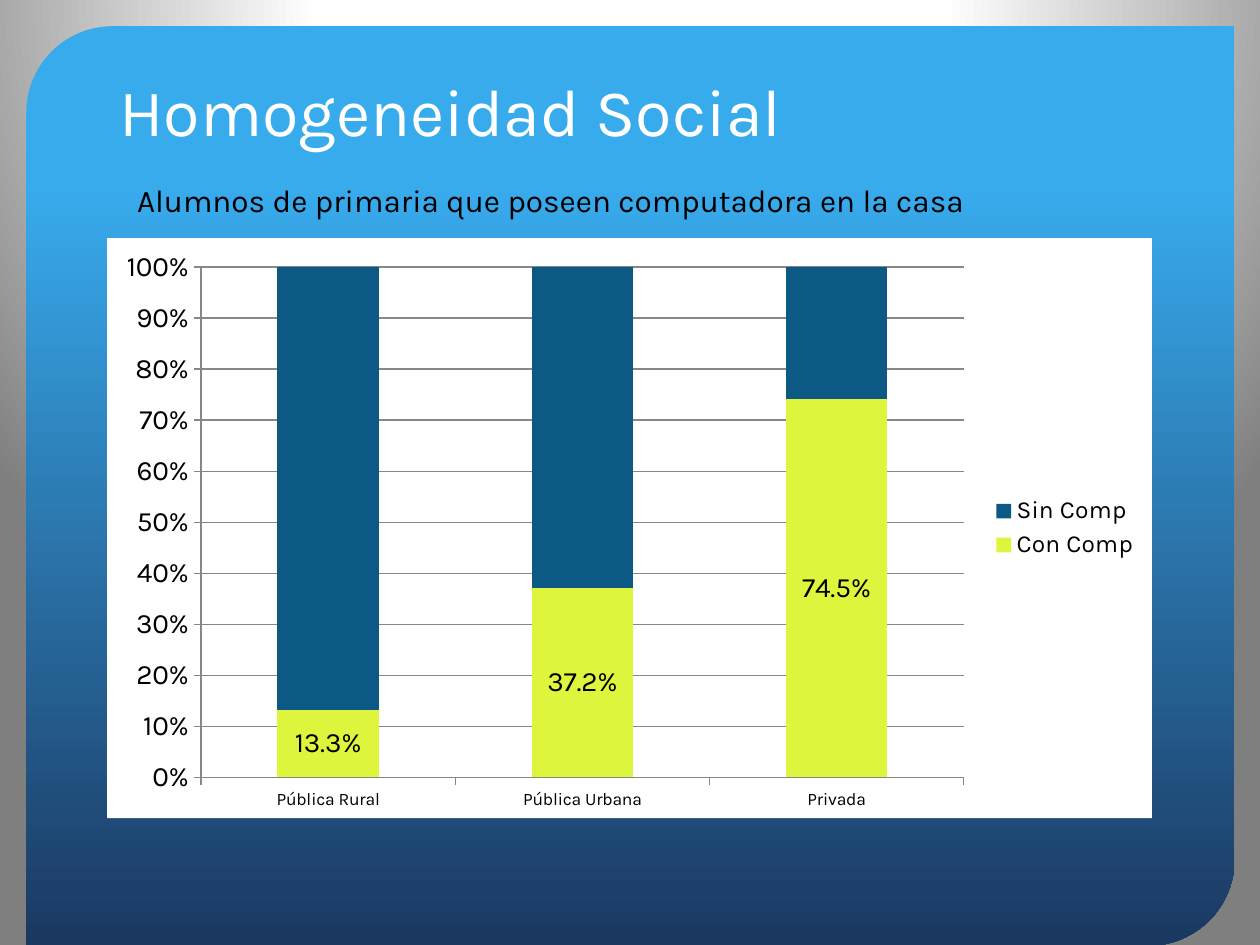
import copy
import dataclasses
import typing

import lxml.etree
import pptx
import pptx.chart.axis
import pptx.chart.data
import pptx.dml.color
import pptx.dml.fill
import pptx.enum.chart
import pptx.enum.shapes
import pptx.enum.text
import pptx.oxml
import pptx.oxml.ns
import pptx.slide
import pptx.util

Pt = pptx.util.Pt
qn = pptx.oxml.ns.qn


@dataclasses.dataclass(frozen=True)
class Theme:
    font: str = "Karla"
    white: str = "FFFFFF"
    black: str = "000000"
    grid: str = "878787"
    with_computer: str = "DDF53D"
    without_computer: str = "0C5986"
    title_size: float = 38
    subtitle_size: float = 18
    value_size: float = 16
    legend_size: float = 14
    category_size: float = 10


class Box(typing.NamedTuple):
    left: float
    top: float
    width: float
    height: float

    def lengths(self) -> list[pptx.util.Length]:
        return [Pt(length) for length in self]


class Stop(typing.NamedTuple):
    position: float
    color: str


@dataclasses.dataclass(frozen=True)
class Line:
    text: str
    box: Box
    size: float
    color: str
    anchor: pptx.enum.text.MSO_ANCHOR


@dataclasses.dataclass(frozen=True)
class Group:
    name: str
    shares: tuple[float, ...]
    color: str
    labelled: bool


THEME = Theme()
BACKDROP = (Stop(0, "FFFFFF"), Stop(0.4, "FEFEFE"), Stop(1, "7F7F7F"))
PANEL = (Stop(0.17, "38ABED"), Stop(1, "1B3861"))
PANEL_BOX = Box(15, 15, 690.5, 525.5)
CHART_BOX = Box(61.2, 136, 597, 331.5)
PLOT_AREA = {"x": 0.09, "y": 0.05, "w": 0.73, "h": 0.88}
SCHOOLS = ("Pública Rural", "Pública Urbana", "Privada")
GROUPS = (
    Group("Con Comp", (0.133, 0.372, 0.745), THEME.with_computer, True),
    Group("Sin Comp", (0.87, 0.63, 0.26), THEME.without_computer, False),
)
LINES = (
    Line("Homogeneidad Social", Box(61.2, 30.2, 597, 59), THEME.title_size,
         THEME.white, pptx.enum.text.MSO_ANCHOR.BOTTOM),
    Line("Alumnos de primaria que poseen computadora en la casa",
         Box(71.3, 100.1, 587.5, 28.8), THEME.subtitle_size,
         THEME.black, pptx.enum.text.MSO_ANCHOR.TOP),
)


def rgb(color: str) -> pptx.dml.color.RGBColor:
    return pptx.dml.color.RGBColor.from_string(color)


def style_font(font, size: float, color: str = THEME.black) -> None:
    font.name = THEME.font
    font.size = Pt(size)
    font.bold = False
    font.color.rgb = rgb(color)


def set_stops(fill: pptx.dml.fill.FillFormat, stops: tuple[Stop, ...]) -> None:
    for gradient_stop, stop in zip(fill.gradient_stops, stops):
        gradient_stop.position = stop.position
        gradient_stop.color.rgb = rgb(stop.color)


def paint_backdrop(slide: pptx.slide.Slide) -> None:
    fill = slide.background.fill
    fill.gradient()
    gradient = slide.element.find(".//" + qn("a:gradFill"))
    stop_list = gradient.find(qn("a:gsLst"))
    stop_list.append(copy.deepcopy(stop_list[0]))
    set_stops(fill, BACKDROP)
    gradient.remove(gradient.find(qn("a:lin")))
    circle = lxml.etree.Element(qn("a:path"), path="circle")
    lxml.etree.SubElement(circle, qn("a:fillToRect"),
                          l="50000", t="-80000", r="50000", b="180000")
    stop_list.addnext(circle)


def draw_panel(slide: pptx.slide.Slide) -> None:
    panel = slide.shapes.add_shape(
        pptx.enum.shapes.MSO_SHAPE.ROUND_2_DIAG_RECTANGLE, *PANEL_BOX.lengths())
    panel.adjustments[0] = 0.094
    panel.adjustments[1] = 0
    panel.shadow.inherit = False
    panel.line.fill.background()
    panel.fill.gradient()
    panel.fill.gradient_angle = 270
    set_stops(panel.fill, PANEL)


def draw_line(slide: pptx.slide.Slide, line: Line) -> None:
    frame = slide.shapes.add_textbox(*line.box.lengths()).text_frame
    frame.word_wrap = True
    frame.vertical_anchor = line.anchor
    run = frame.paragraphs[0].add_run()
    run.text = line.text
    style_font(run.font, line.size, line.color)


def style_axis(axis: pptx.chart.axis._BaseAxis, size: float) -> None:
    axis.major_tick_mark = pptx.enum.chart.XL_TICK_MARK.OUTSIDE
    axis.minor_tick_mark = pptx.enum.chart.XL_TICK_MARK.NONE
    axis.format.line.color.rgb = rgb(THEME.grid)
    axis.format.line.width = Pt(0.75)
    style_font(axis.tick_labels.font, size)


def draw_chart(slide: pptx.slide.Slide) -> None:
    chart_data = pptx.chart.data.CategoryChartData(number_format="0.0%")
    chart_data.categories = SCHOOLS
    for group in GROUPS:
        chart_data.add_series(group.name, group.shares)
    chart = slide.shapes.add_chart(
        pptx.enum.chart.XL_CHART_TYPE.COLUMN_STACKED_100,
        *CHART_BOX.lengths(), chart_data).chart
    chart.has_title = False
    style_font(chart.font, THEME.category_size)

    style_axis(chart.category_axis, THEME.category_size)
    shares = chart.value_axis
    style_axis(shares, THEME.value_size)
    shares.minimum_scale, shares.maximum_scale, shares.major_unit = 0, 1, 0.1
    shares.tick_labels.number_format = "0%"
    shares.tick_labels.number_format_is_linked = False
    shares.has_major_gridlines = True
    shares.major_gridlines.format.line.color.rgb = rgb(THEME.grid)
    shares.major_gridlines.format.line.width = Pt(0.75)

    chart.has_legend = True
    chart.legend.position = pptx.enum.chart.XL_LEGEND_POSITION.RIGHT
    chart.legend.include_in_layout = False
    style_font(chart.legend.font, THEME.legend_size)

    columns = chart.plots[0]
    columns.gap_width, columns.overlap = 150, 100
    columns.vary_by_categories = False
    for group, series in zip(GROUPS, columns.series):
        series.format.fill.solid()
        series.format.fill.fore_color.rgb = rgb(group.color)
        if group.labelled:
            labels = series.data_labels
            labels.show_value = True
            labels.number_format = "0.0%"
            labels.number_format_is_linked = False
            style_font(labels.font, THEME.value_size)

    plot_area = chart.element.find(".//" + qn("c:plotArea"))
    for default_layout in plot_area.findall(qn("c:layout")):
        plot_area.remove(default_layout)
    layout = lxml.etree.Element(qn("c:layout"))
    manual = lxml.etree.SubElement(layout, qn("c:manualLayout"))
    settings = {"layoutTarget": "inner", "xMode": "edge", "yMode": "edge", **PLOT_AREA}
    for name, setting in settings.items():
        lxml.etree.SubElement(manual, qn("c:" + name), val=str(setting))
    plot_area.insert(0, layout)

    surface = lxml.etree.Element(qn("c:spPr"))
    solid = lxml.etree.SubElement(surface, qn("a:solidFill"))
    lxml.etree.SubElement(solid, qn("a:srgbClr"), val=THEME.white)
    outline = lxml.etree.SubElement(surface, qn("a:ln"))
    lxml.etree.SubElement(outline, qn("a:noFill"))
    chart.element.find(qn("c:chart")).addnext(surface)


def main() -> None:
    deck = pptx.Presentation()
    deck.slide_width, deck.slide_height = Pt(720), Pt(540)
    slide = deck.slides.add_slide(deck.slide_layouts[6])
    paint_backdrop(slide)
    draw_panel(slide)
    draw_chart(slide)
    for line in LINES:
        draw_line(slide, line)
    deck.save("out.pptx")


if __name__ == "__main__":
    main()
